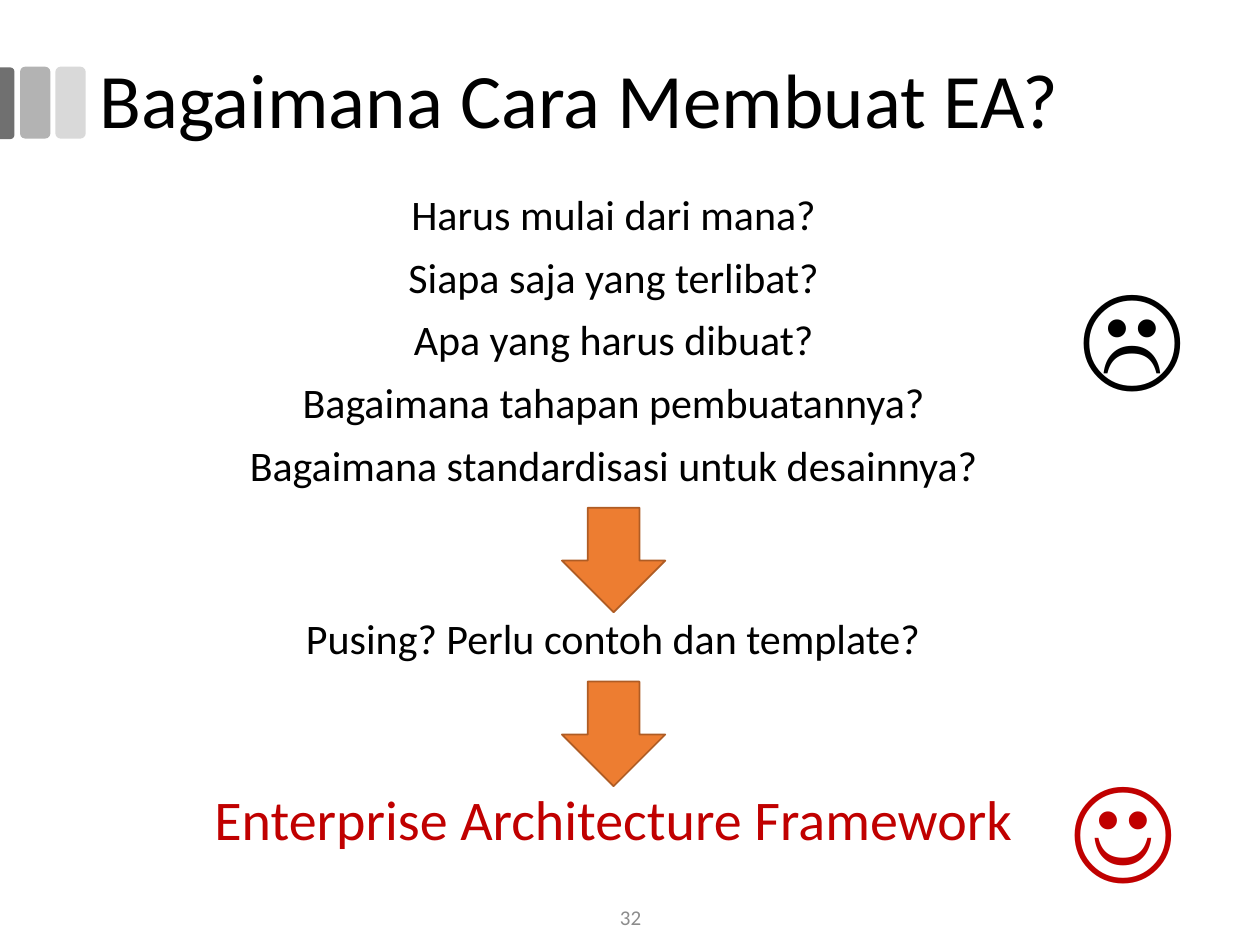
"""Build the slide on how to create an enterprise architecture."""
from pptx import Presentation
from pptx.dml.color import RGBColor
from pptx.enum.shapes import MSO_SHAPE
from pptx.enum.text import MSO_ANCHOR, PP_ALIGN
from pptx.util import Inches, Pt

COLORS = {
    "black": "000000", "red": "C00000", "page": "8C8C8C",
    "light": "D9D9D9", "middle": "B3B3B3", "dark": "707070",
    "arrow": "ED7D31", "arrow_edge": "AF5C24",
}
QUESTIONS = [
    "Harus mulai dari mana?",
    "Siapa saja yang terlibat?",
    "Apa yang harus dibuat?",
    "Bagaimana tahapan pembuatannya?",
    "Bagaimana standardisasi untuk desainnya?",
]

deck = Presentation()
deck.slide_width, deck.slide_height = Inches(10), Inches(7.5)
slide = deck.slides.add_slide(deck.slide_layouts[6])


def add_text(lines, box, size=24, color="black", align=PP_ALIGN.CENTER,
             anchor=MSO_ANCHOR.TOP, spacing=0.9, wrap=True):
    frame = slide.shapes.add_textbox(*map(Inches, box)).text_frame
    frame.word_wrap = wrap
    frame.vertical_anchor = anchor
    for index, line in enumerate(lines):
        paragraph = frame.paragraphs[0] if index == 0 else frame.add_paragraph()
        paragraph.alignment = align
        paragraph.line_spacing = spacing
        if index:
            paragraph.space_before = Pt(10)
        run = paragraph.add_run()
        run.text = line
        run.font.name = "Calibri"
        run.font.size = Pt(size)
        run.font.color.rgb = RGBColor.from_string(COLORS[color])


def add_block(kind, box, fill, edge=None):
    block = slide.shapes.add_shape(kind, *map(Inches, box))
    block.shadow.inherit = False
    block.fill.solid()
    block.fill.fore_color.rgb = RGBColor.from_string(COLORS[fill])
    if edge:
        block.line.color.rgb = RGBColor.from_string(COLORS[edge])
        block.line.width = Pt(1)
    else:
        block.line.fill.background()
    return block


for left, shade in [(0.44, "light"), (0.16, "middle")]:
    add_block(MSO_SHAPE.ROUNDED_RECTANGLE, (left, 0.53, 0.24, 0.57), shade)
edge_tab = add_block(MSO_SHAPE.ROUND_2_SAME_RECTANGLE, (-0.23, 0.76, 0.57, 0.12), "dark")
edge_tab.rotation = 90
edge_tab.adjustments[0] = 0.29

add_text(["Bagaimana Cara Membuat EA?"], (0.69, 0.17, 8.62, 1.31), size=44,
         align=PP_ALIGN.LEFT, anchor=MSO_ANCHOR.MIDDLE)
add_text(QUESTIONS, (0.56, 1.49, 8.62, 2.69))
add_text(["32"], (3.88, 7.08, 2.25, 0.4), size=12, color="page",
         anchor=MSO_ANCHOR.MIDDLE, spacing=1.0)

for top in (4.03, 5.41):
    add_block(MSO_SHAPE.DOWN_ARROW, (4.46, top, 0.82, 0.83), "arrow", "arrow_edge")

add_text(["Pusing? Perlu contoh dan template?"], (1.8, 4.86, 6.13, 0.59))
add_text(["Enterprise Architecture Framework"], (1.43, 6.24, 6.88, 0.59),
         size=32, color="red")
add_text(["☹"], (8.47, 2.02, 0.86, 1.21), size=66, spacing=1.0)
add_text(["☺"], (8.4, 5.93, 0.98, 1.21), size=66, color="red", spacing=1.0, wrap=False)

deck.save("out.pptx")
